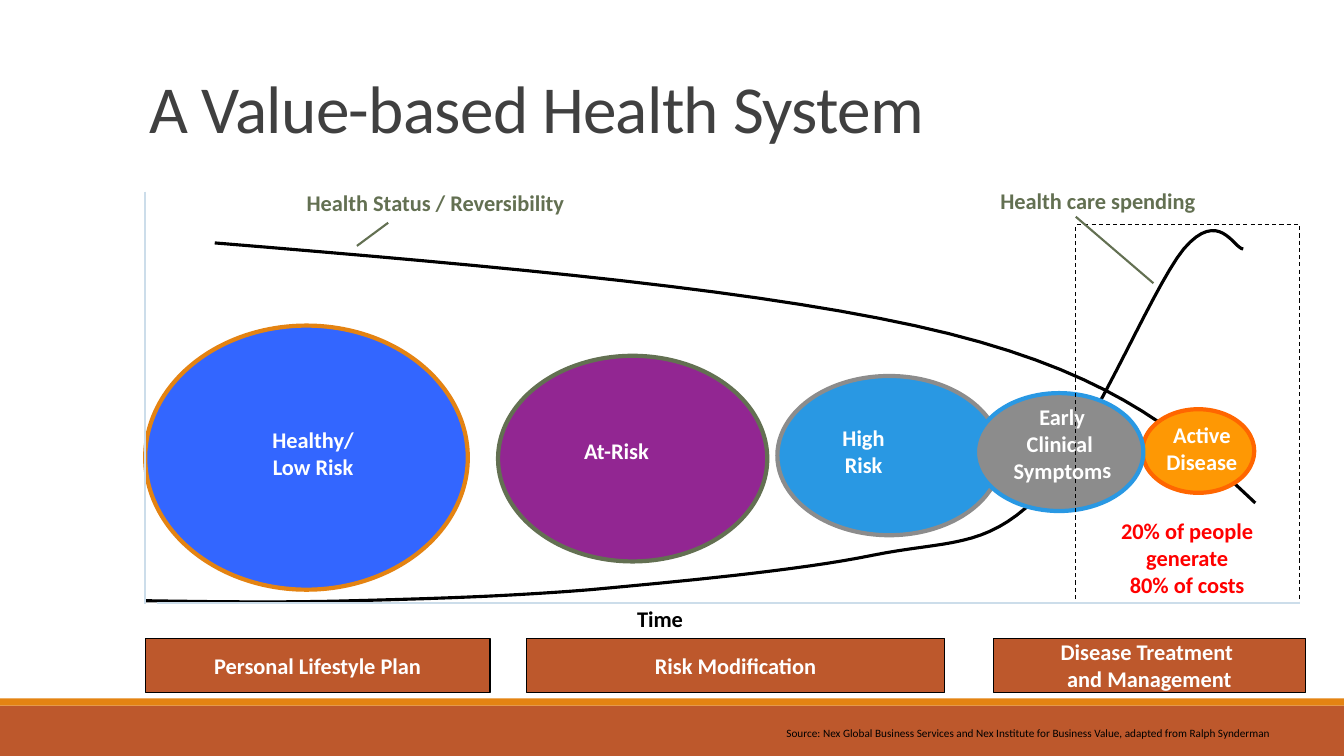
from pptx import Presentation
from pptx.dml.color import RGBColor
from pptx.enum.dml import MSO_LINE
from pptx.enum.shapes import MSO_CONNECTOR, MSO_SHAPE
from pptx.enum.text import MSO_ANCHOR, PP_ALIGN
from pptx.oxml.ns import qn
from pptx.util import Inches, Pt
from lxml.etree import SubElement

BLACK, WHITE, RUST, ORANGE = "000000", "FFFFFF", "BD582C", "E48312"
GREEN, BLUE, GRAY, PALE = "637052", "2998E3", "8C8C8C", "CCDDEA"
STEPS = 16
BOLD = {"size": Pt(16), "bold": True}


def color(text):
    return RGBColor.from_string(text)


def assign(target, values):
    for name, value in values.items():
        setattr(target, name, value)


def stroke(shape, tint, width):
    if tint is None:
        shape.line.fill.background()
        return
    shape.line.color.rgb = color(tint)
    shape.line.width = Pt(width)


def write(shape, text, tint, font=BOLD, frame=None, para=None):
    body = shape.text_frame
    assign(body, {"word_wrap": False, **(frame or {})})
    body.text = text
    for line in body.paragraphs:
        assign(line, {"alignment": PP_ALIGN.CENTER, **(para or {})})
        for run in line.runs:
            assign(run.font, {"name": "Calibri", **font})
            run.font.color.rgb = color(tint)


def label(slide, box, text, tint, spin=0, **style):
    shape = slide.shapes.add_textbox(*map(Inches, box))
    shape.rotation = spin
    write(shape, text, tint, **style)
    return shape


def block(slide, kind, box, fill=None, edge=None, width=0.75):
    shape = slide.shapes.add_shape(kind, *map(Inches, box))
    shape.shadow.inherit = False
    if fill:
        shape.fill.solid()
        shape.fill.fore_color.rgb = color(fill)
    else:
        shape.fill.background()
    stroke(shape, edge, width)
    return shape


def fade(shape, percent):
    tint = shape.fill._xPr.find(qn("a:solidFill"))[0]
    SubElement(tint, qn("a:alpha")).set("val", str(percent * 1000))


def rule(slide, start, end, tint):
    line = slide.shapes.add_connector(
        MSO_CONNECTOR.STRAIGHT, *map(Inches, start + end))
    stroke(line, tint, 1.5)
    SubElement(line._element.spPr, qn("a:effectLst"))


def bezier(knots, t):
    weights = ((1 - t) ** 3, 3 * t * (1 - t) ** 2, 3 * t * t * (1 - t), t ** 3)
    return tuple(Inches(sum(w * k[axis] for w, k in zip(weights, knots)))
                 for axis in (0, 1))


def curve(slide, knots):
    points = [bezier(knots[i:i + 4], step / STEPS)
              for i in range(0, len(knots) - 1, 3)
              for step in range(1, STEPS + 1)]
    pen = slide.shapes.build_freeform(*map(Inches, knots[0]))
    pen.add_line_segments(points, close=False)
    shape = pen.convert_to_shape()
    shape.shadow.inherit = False
    shape.fill.background()
    stroke(shape, BLACK, 2.25)


def main():
    deck = Presentation()
    assign(deck, {"slide_width": Inches(13.33), "slide_height": Inches(7.5)})
    slide = deck.slides.add_slide(deck.slide_layouts[6])
    rect, oval = MSO_SHAPE.RECTANGLE, MSO_SHAPE.OVAL
    wide = {"word_wrap": True}

    block(slide, rect, (0, 7, 13.33, 0.5), RUST)
    block(slide, rect, (0, 6.93, 13.33, 0.07), ORANGE)

    curve(slide, [(2.13, 2.41), (4.91, 2.64), (7.69, 2.88), (9.41, 3.31),
                  (11.13, 3.74), (11.79, 4.37), (12.45, 4.99)])
    curve(slide, [(1.44, 5.96), (2.11, 5.97), (2.77, 5.98), (3.5, 5.96),
                  (4.24, 5.94), (5, 5.92), (5.86, 5.85),
                  (6.72, 5.77), (7.92, 5.66), (8.65, 5.51),
                  (9.39, 5.36), (9.76, 5.45), (10.27, 4.95),
                  (10.79, 4.44), (11.4, 2.89), (11.74, 2.47),
                  (12.09, 2.06), (12.24, 2.47), (12.33, 2.47)])

    block(slide, oval, (1.44, 3.23, 3.2, 2.62), "3366FF", ORANGE, 3)
    risk = block(slide, oval, (4.94, 3.53, 2.67, 2.04), "800080", GREEN, 3)
    fade(risk, 85)
    block(slide, oval, (7.71, 3.73, 2.22, 1.58), BLUE, GRAY, 3)
    block(slide, oval, (11.33, 4.06, 1.11, 0.83), "FE9804", "FF6600", 3)
    block(slide, oval, (9.67, 3.9, 1.67, 1.17), GRAY, BLUE, 3)

    rule(slide, (1.44, 1.9), (1.44, 5.99), PALE)
    costs = block(slide, rect, (10.67, 2.23, 2.22, 3.75), edge=BLACK)
    costs.line.dash_style = MSO_LINE.DASH
    rule(slide, (1.56, 5.98), (12.89, 5.98), PALE)

    label(slide, (11.01, 5.08, 1.53, 0.91),
          "20% of people\ngenerate\n80% of costs", "FF0000")
    for box, text, spin in (
            ((2.59, 4.18, 1.03, 0.64), "Healthy/\nLow Risk", 359.9),
            ((5.56, 4.29, 1.11, 0.37), "At-Risk", 0.4),
            ((8.25, 4.16, 0.63, 0.64), "High\nRisk", 359.7),
            ((11.46, 4.13, 0.92, 0.64), "Active\nDisease", 0.2),
            ((9.94, 3.95, 1.19, 0.91), "Early\nClinical \nSymptoms", 359.7)):
        label(slide, box, text, WHITE, spin)

    label(slide, (9.11, 1.81, 3.56, 0.37), "Health care spending", GREEN,
          frame=wide)
    rule(slide, (10.67, 2.15), (11.44, 2.81), GREEN)
    label(slide, (1.69, 1.83, 5.26, 0.37), "Health Status / Reversibility",
          GREEN, frame=wide)
    rule(slide, (3.85, 2.21), (3.54, 2.44), GREEN)

    left = {"alignment": PP_ALIGN.LEFT}
    low = {**wide, "vertical_anchor": MSO_ANCHOR.BOTTOM}
    label(slide, (7.75, 7.21, 5.41, 0.13),
          "Source: Nex Global Business Services and Nex Institute for "
          "Business Value, adapted from Ralph Synderman", BLACK,
          font={"size": Pt(8)}, para=left,
          frame={**low, "margin_left": Inches(0.05), "margin_right": 0,
                 "margin_top": 0, "margin_bottom": 0})
    title = label(slide, (1.38, 0.4, 11, 1.11), "A Value-based Health System",
                  "404040", font={"size": Pt(48)}, frame=low,
                  para={**left, "line_spacing": 0.85})
    run = title.text_frame.paragraphs[0].runs[0]
    run.font._element.set("spc", "-50")

    for x, width, text in (
            (1.44, 3.42, "Personal Lifestyle Plan"),
            (5.22, 4.15, "Risk Modification"),
            (9.85, 3.1, "Disease Treatment \nand Management")):
        stage = block(slide, rect, (x, 6.33, width, 0.54), RUST, BLACK)
        write(stage, text, WHITE, frame={"vertical_anchor": MSO_ANCHOR.MIDDLE})
    label(slide, (6.22, 5.95, 0.66, 0.37), "Time", BLACK, para=left)

    deck.save("out.pptx")


if __name__ == "__main__":
    main()
